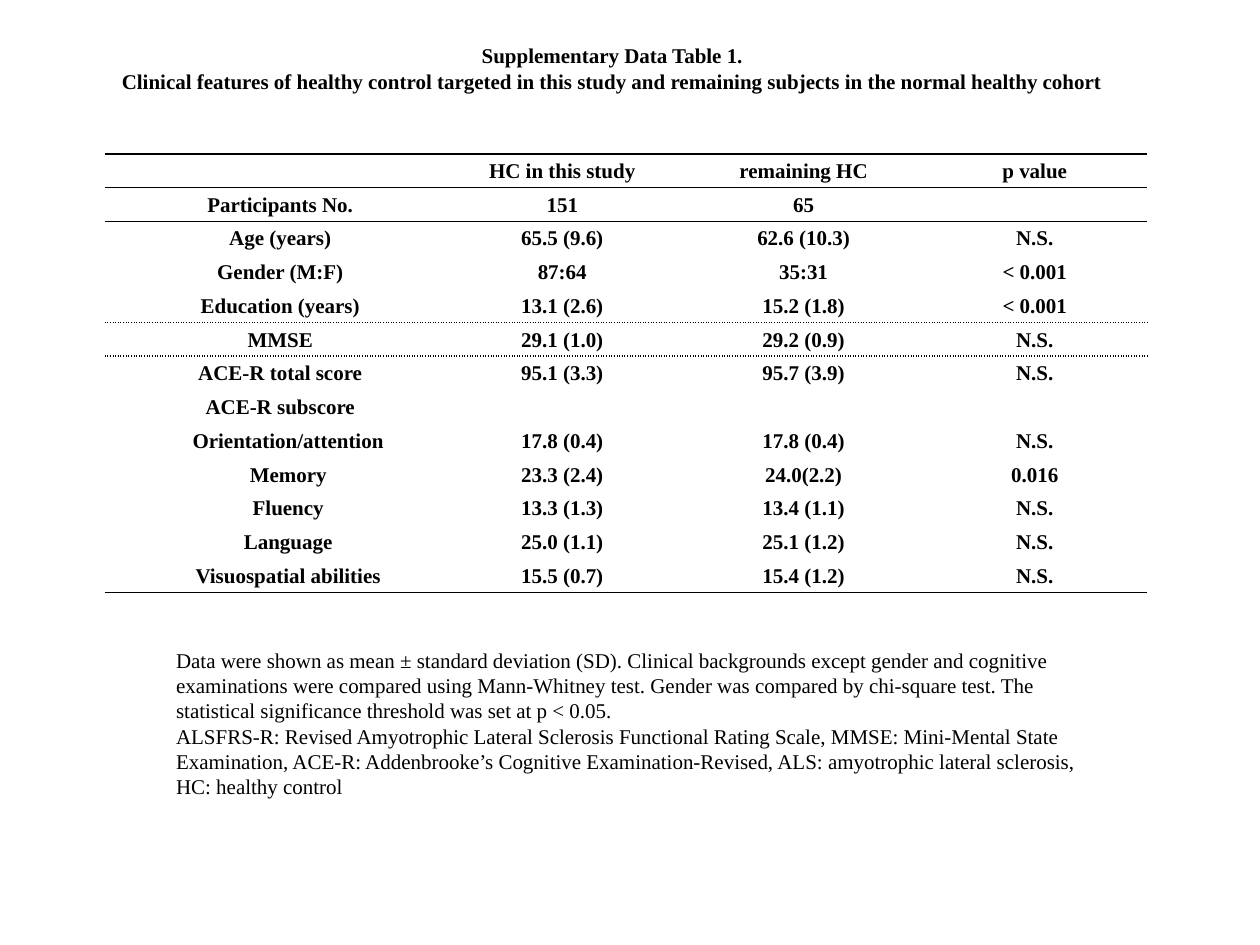
from lxml import etree
from pptx import Presentation
from pptx.dml.color import RGBColor
from pptx.enum import text
from pptx.oxml.ns import qn
from pptx.util import Cm, Pt

INK = "000000"
PLAIN = "{2D5ABB26-0587-4C30-8999-92F81FD0307C}"
TITLE = [
    "Supplementary Data Table 1.",
    "Clinical features of healthy control targeted in this study and "
    "remaining subjects in the normal healthy cohort",
]
NOTES = [
    "Data were shown as mean ± standard deviation (SD). Clinical backgrounds except "
    "gender and cognitive examinations were compared using Mann-Whitney test. Gender "
    "was compared by chi-square test. The statistical significance threshold was set "
    "at p < 0.05.",
    "ALSFRS-R: Revised Amyotrophic Lateral Sclerosis Functional Rating Scale, MMSE: "
    "Mini-Mental State Examination, ACE-R: Addenbrooke’s Cognitive Examination-Revised, "
    "ALS: amyotrophic lateral sclerosis, HC: healthy control",
]
ROWS = [
    ("", "HC in this study", "remaining HC", "p value"),
    ("Participants No.", "151", "65", ""),
    ("Age (years)", "65.5 (9.6)", "62.6 (10.3)", "N.S."),
    ("Gender (M:F)", "87:64", "35:31", "< 0.001"),
    ("Education (years)", "13.1 (2.6)", "15.2 (1.8)", "< 0.001"),
    ("MMSE", "29.1 (1.0)", "29.2 (0.9)", "N.S."),
    ("ACE-R total score", "95.1 (3.3)", "95.7 (3.9)", "N.S."),
    ("ACE-R subscore", "", "", ""),
    ("Orientation/attention", "17.8 (0.4)", "17.8 (0.4)", "N.S."),
    ("Memory", "23.3 (2.4)", "24.0(2.2)", "0.016"),
    ("Fluency", "13.3 (1.3)", "13.4 (1.1)", "N.S."),
    ("Language", "25.0 (1.1)", "25.1 (1.2)", "N.S."),
    ("Visuospatial abilities", "15.5 (0.7)", "15.4 (1.2)", "N.S."),
]
WIDTHS = (6.76, 4.93, 4.8, 4.52)
SUBS = 8
RULES = {
    0: {"lnT": (1, "solid"), "lnB": (0.5, "solid")},
    1: {"lnT": (0.5, "solid")},
    4: {"lnB": (1, "sysDot")},
    5: {"lnT": (1, "sysDot")},
    12: {"lnB": (0.5, "solid")},
}


def color(code):
    """Turn a hex string into a colour."""
    return RGBColor.from_string(code)


def style(para, bold, align):
    """Set the font and alignment of a paragraph."""
    para.alignment = align
    font = para.font
    font.name, font.size, font.bold = "Times New Roman", Pt(12), bold
    font.color.rgb = color(INK)


def write(frame, lines, bold, align):
    """Fill a text frame with one paragraph per line."""
    frame.word_wrap = True
    frame.vertical_anchor = text.MSO_ANCHOR.TOP
    frame.text = "\n".join(lines)
    for para in frame.paragraphs:
        style(para, bold, align)


def rule(cell, side, width, dash):
    """Draw one border of a cell."""
    line = etree.SubElement(cell._tc.get_or_add_tcPr(), qn("a:" + side), w=str(Pt(width)))
    fill = etree.SubElement(line, qn("a:solidFill"))
    etree.SubElement(fill, qn("a:srgbClr"), val=INK)
    etree.SubElement(line, qn("a:prstDash"), val=dash)


def indent(row, col):
    """Give the left margin of a cell in centimetres."""
    if col or not row:
        return 0.03
    return 0.67 if row >= SUBS else 0.35


def add_title(slide, left, top, width, height):
    """Place the two-line title in its placeholder."""
    title = slide.shapes.title
    title.left, title.top = Cm(left), Cm(top)
    title.width, title.height = Cm(width), Cm(height)
    write(title.text_frame, TITLE, True, text.PP_ALIGN.CENTER)
    title.text_frame.auto_size = text.MSO_AUTO_SIZE.NONE


def add_grid(slide, left, top, height):
    """Place the table of clinical features."""
    frame = slide.shapes.add_table(
        len(ROWS), len(WIDTHS), Cm(left), Cm(top), Cm(sum(WIDTHS)), Cm(height))
    grid = frame.table
    grid.first_row = grid.horz_banding = False
    grid._tbl.tblPr.find(qn("a:tableStyleId")).text = PLAIN
    for col, width in zip(grid.columns, WIDTHS):
        col.width = Cm(width)
    for r, row in enumerate(ROWS):
        for c, label in enumerate(row):
            cell = grid.cell(r, c)
            cell.text = label
            cell.margin_left = Cm(indent(r, c))
            cell.margin_right = cell.margin_top = Cm(0.03)
            cell.margin_bottom = 0
            cell.vertical_anchor = text.MSO_ANCHOR.MIDDLE
            para = cell.text_frame.paragraphs[0]
            style(para, True, text.PP_ALIGN.CENTER)
            if not label:
                etree.SubElement(para._p, qn("a:endParaRPr"), sz="1200")
            for side, (width, dash) in RULES.get(r, {}).items():
                rule(cell, side, width, dash)
            cell.fill.background()


def add_notes(slide, left, top, width, height):
    """Place the notes below the table."""
    box = slide.shapes.add_textbox(Cm(left), Cm(top), Cm(width), Cm(height))
    write(box.text_frame, NOTES, False, text.PP_ALIGN.LEFT)


def main():
    """Build and save the slide."""
    deck = Presentation()
    deck.slide_width, deck.slide_height = Cm(25.4), Cm(19.05)
    slide = deck.slides.add_slide(deck.slide_layouts[5])
    add_title(slide, 0, 0.74, 24.69, 1.27)
    add_grid(slide, 2.11, 3.1, 8.84)
    add_notes(slide, 3.3, 12.93, 18.8, 3.33)
    deck.save("out.pptx")


if __name__ == "__main__":
    main()
